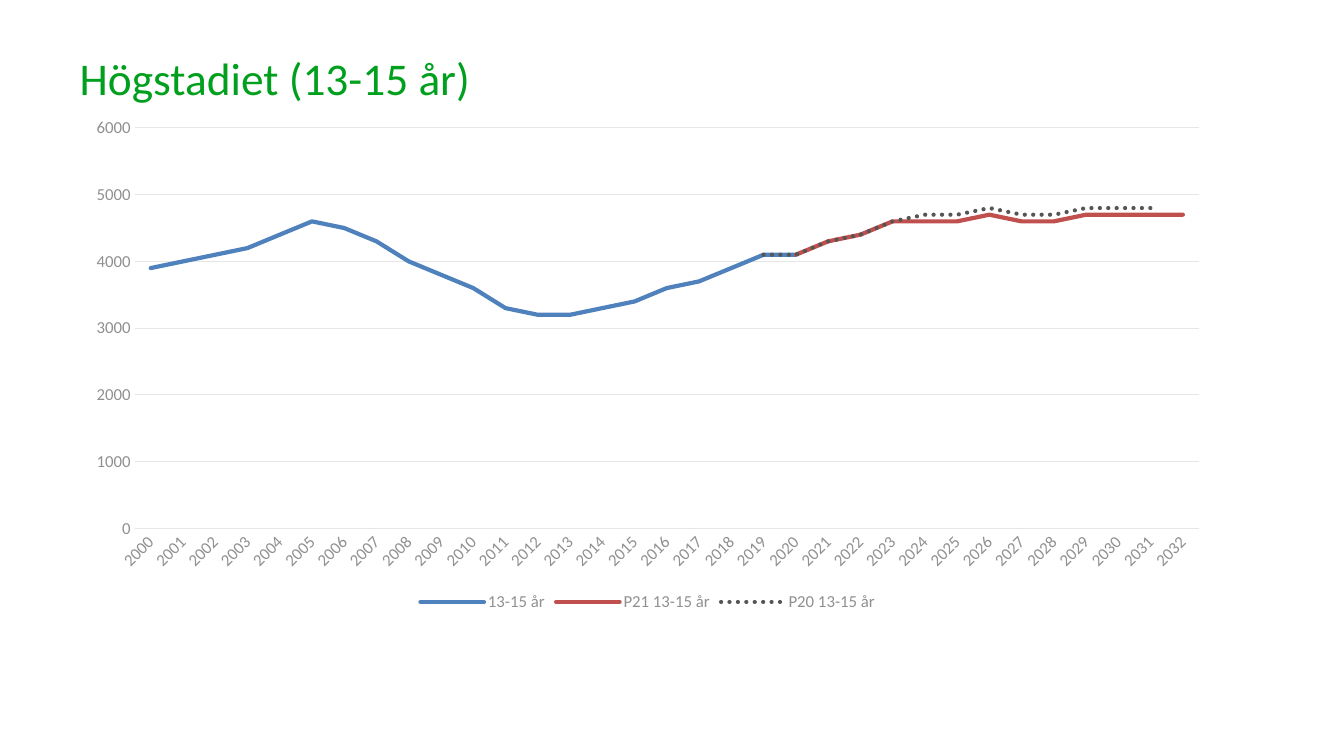
from lxml import etree
from pptx import Presentation
from pptx.chart.data import CategoryChartData
from pptx.dml.color import RGBColor
from pptx.enum.chart import XL_CHART_TYPE, XL_LEGEND_POSITION, XL_TICK_MARK
from pptx.enum.dml import MSO_LINE
from pptx.enum.text import MSO_ANCHOR
from pptx.util import Inches, Pt

LINE = XL_CHART_TYPE.LINE
BELOW = XL_LEGEND_POSITION.BOTTOM
NO_TICK = XL_TICK_MARK.NONE
DOTS = MSO_LINE.ROUND_DOT
LOW = MSO_ANCHOR.BOTTOM

YEARS = range(2000, 2033)
SERIES = [
    ("13-15 år", 2000, "4F81BD", None,
     [3900, 4000, 4100, 4200, 4400, 4600, 4500, 4300, 4000, 3800, 3600,
      3300, 3200, 3200, 3300, 3400, 3600, 3700, 3900, 4100, 4100]),
    ("P21 13-15 år", 2020, "C0504D", None,
     [4100, 4300, 4400, 4600, 4600, 4600, 4700, 4600, 4600, 4700, 4700,
      4700, 4700]),
    ("P20 13-15 år", 2019, "555555", DOTS,
     [4100, 4100, 4300, 4400, 4600, 4700, 4700, 4800, 4700, 4700, 4800,
      4800, 4800]),
]


def color(code):
    return RGBColor.from_string(code)


class Deck:
    face = "Calibri"
    green = "00A01E"
    gray = "909090"
    pale = "E6E6E6"

    def __init__(self):
        self.prs = Presentation()
        self.prs.slide_width = Inches(13.33)
        self.prs.slide_height = Inches(7.5)
        self.slide = self.prs.slides.add_slide(self.prs.slide_layouts[6])

    def style(self, font, size, code):
        font.name = self.face
        font.size = Pt(size)
        font.color.rgb = color(code)

    def stroke(self, line, code, width):
        line.color.rgb = color(code)
        line.width = Pt(width)

    def title(self, text, x, y, w, h):
        box = self.slide.shapes.add_textbox(
            Inches(x), Inches(y), Inches(w), Inches(h))
        frame = box.text_frame
        frame.word_wrap = True
        frame.vertical_anchor = LOW
        frame.margin_left = Inches(0.07)
        frame.margin_top = frame.margin_bottom = 0
        frame.text = text
        para = frame.paragraphs[0]
        para.space_after = Pt(6)
        self.style(para.runs[0].font, 32.4, self.green)

    def axis(self, axis):
        axis.major_tick_mark = axis.minor_tick_mark = NO_TICK
        self.style(axis.tick_labels.font, 12, self.gray)

    def chart(self, years, series, x, y, w, h):
        data = CategoryChartData(number_format="0")
        data.categories = [str(year) for year in years]
        for name, start, _, _, vals in series:
            known = dict(enumerate(vals, start))
            data.add_series(name, [known.get(year) for year in years])
        chart = self.slide.shapes.add_chart(
            LINE, Inches(x), Inches(y), Inches(w), Inches(h), data).chart
        self.style(chart.font, 10, "555555")
        chart.has_title = False
        chart.has_legend = True
        chart.legend.position = BELOW
        chart.legend.include_in_layout = False
        self.style(chart.legend.font, 12, self.gray)

        cat, val = chart.category_axis, chart.value_axis
        self.axis(cat)
        self.stroke(cat.format.line, self.pale, 0.75)
        body = cat._element.find(".//{*}txPr/{*}bodyPr")
        body.set("rot", "-2700000")
        body.set("vert", "horz")
        self.axis(val)
        val.minimum_scale, val.maximum_scale, val.major_unit = 0, 6000, 1000
        val.format.line.fill.background()
        val.tick_labels.number_format = "0"
        val.tick_labels.number_format_is_linked = False
        self.stroke(val.major_gridlines.format.line, self.pale, 0.75)

        chart.plots[0].vary_by_categories = False
        for plot, (_, _, code, dash, _) in zip(chart.plots[0].series, series):
            plot.smooth = False
            line = plot.format.line
            self.stroke(line, code, 3)
            if dash:
                line.dash_style = dash
            edge = plot._element.find(".//{*}spPr/{*}ln")
            edge.set("cap", "rnd")
            etree.SubElement(edge, edge[0].tag.replace("solidFill", "round"))


def main():
    deck = Deck()
    deck.title("Högstadiet (13-15 år)", 0.72, 0.42, 11.39, 0.62)
    deck.chart(YEARS, SERIES, 0.73, 1.07, 11.39, 5.04)
    deck.prs.save("out.pptx")


if __name__ == "__main__":
    main()
